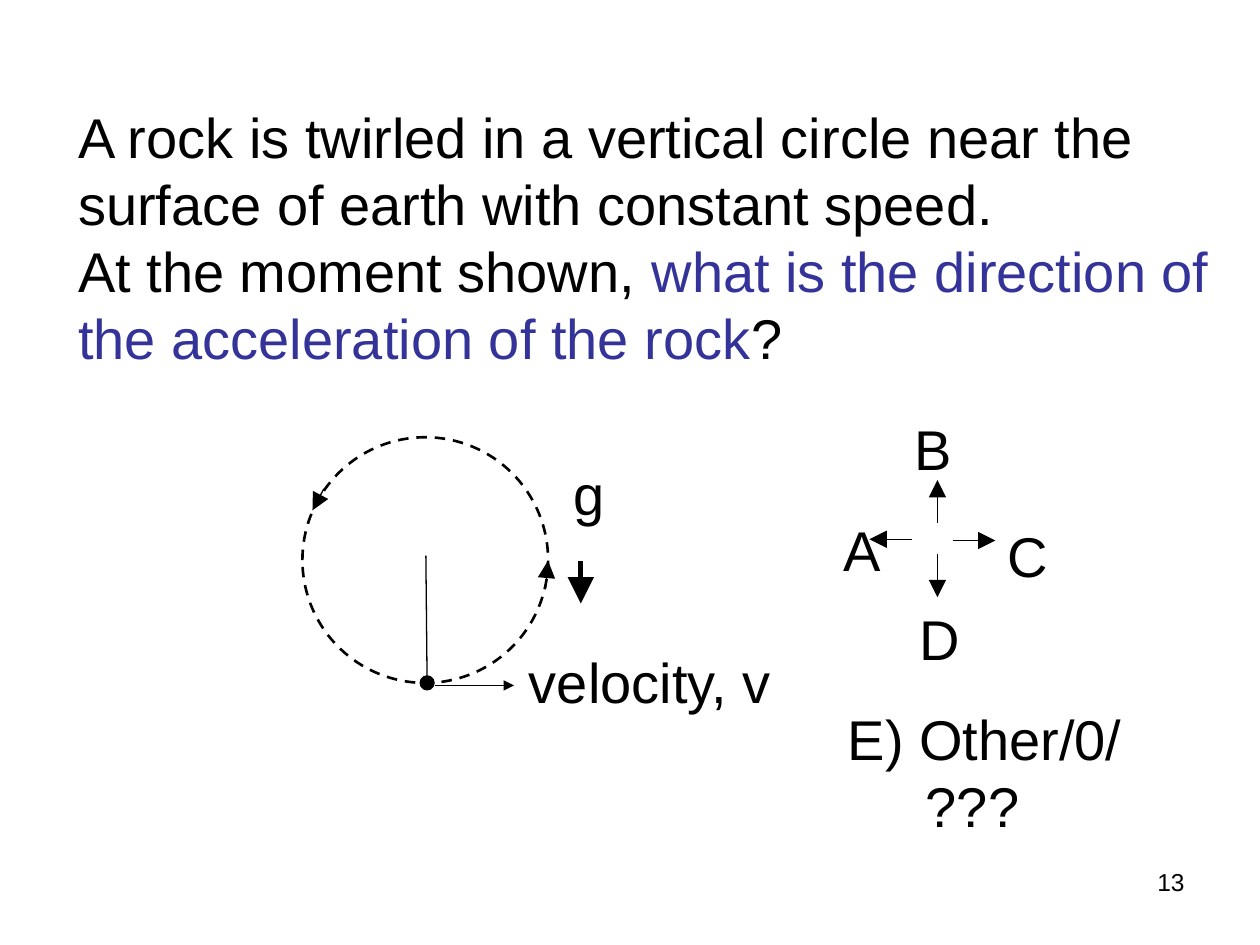
from lxml import etree
from pptx import Presentation
from pptx.dml.color import RGBColor
from pptx.enum.dml import MSO_LINE
from pptx.enum.shapes import MSO_CONNECTOR, MSO_SHAPE
from pptx.enum.text import MSO_ANCHOR, MSO_AUTO_SIZE, PP_ALIGN
from pptx.oxml.ns import qn
from pptx.util import Inches, Pt

COLORS = {"ink": "000000", "question": "333399"}
FONT = "Arial"


def rgb(name):
    return RGBColor.from_string(COLORS[name])


def add_run(p, text, size=32, color="ink"):
    r = p.add_run()
    r.text = text
    r.font.name = FONT
    r.font.size = Pt(size)
    r.font.color.rgb = rgb(color)


def add_text(s, text, x, y, w, h=0.64, size=32, align=PP_ALIGN.LEFT, wrap=False):
    tf = s.shapes.add_textbox(Inches(x), Inches(y), Inches(w), Inches(h)).text_frame
    tf.word_wrap = wrap
    p = tf.paragraphs[0]
    p.alignment = align
    add_run(p, text, size)
    return tf


def add_line(s, x1, y1, x2, y2, width=0.75, head=None):
    """Draw a line; head is the arrowhead size at its end, "med" or "lg"."""
    line = s.shapes.add_connector(MSO_CONNECTOR.STRAIGHT, Inches(x1), Inches(y1),
                                  Inches(x2), Inches(y2))
    line.line.color.rgb = rgb("ink")
    line.line.width = Pt(width)
    if head:
        etree.SubElement(line.line._get_or_add_ln(), qn("a:tailEnd"),
                         type="triangle", w=head, len=head)
    etree.SubElement(line._element.spPr, qn("a:effectLst"))


def add_circle(s, x, y, d, filled=False):
    sp = s.shapes.add_shape(MSO_SHAPE.OVAL, Inches(x), Inches(y), Inches(d), Inches(d))
    sp.shadow.inherit = False
    sp.line.color.rgb = rgb("ink")
    sp.line.width = Pt(1.5)
    if filled:
        sp.fill.solid()
        sp.fill.fore_color.rgb = rgb("ink")
    else:
        sp.fill.background()
        sp.line.dash_style = MSO_LINE.DASH


def question(s, x, y, w, h):
    title = s.shapes.title
    title.left, title.top, title.width, title.height = map(Inches, (x, y, w, h))
    tf = title.text_frame
    tf.word_wrap = True
    tf.auto_size = MSO_AUTO_SIZE.NONE
    tf.vertical_anchor = MSO_ANCHOR.TOP
    p = tf.paragraphs[0]
    p.alignment = PP_ALIGN.LEFT
    add_run(p, "A rock is twirled in a vertical circle near the "
               "surface of earth with constant speed.")
    p.add_line_break()
    add_run(p, "At the moment shown, ")
    add_run(p, "what is the direction of the acceleration of the rock", color="question")
    add_run(p, "?")


def rock_on_string(s, x, y, d):
    """Dashed path of diameter d with the rock at its lowest point."""
    add_circle(s, x, y, d)
    add_line(s, x + 0.98, y + 0.94, x + 0.99, y + d)
    add_circle(s, x + 0.94, y + 1.9, 0.1, filled=True)
    add_line(s, x + 1.05, y + 1.97, x + 1.68, y + 1.97, head="med")
    add_text(s, "velocity, v", x + 1.7, y + 1.62, 2.14)
    # Sense of rotation
    add_line(s, x + 1.93, y + 1.2, x + d, y + 0.98, head="lg")
    add_line(s, x + 0.17, y + 0.41, x + 0.08, y + 0.58, head="lg")
    # Gravity
    add_text(s, "g", x + 2.05, y + 0.13, 0.45)
    add_line(s, x + 2.21, y + 0.98, x + 2.21, y + 1.32, width=3, head="lg")


def answer_compass(s, cx, cy):
    """Four arrows around a centre, each with its answer letter."""
    inner, outer = 0.13, 0.47
    answers = [  # letter, direction, arrow centre shift, label place and width
        ("A", (-1, 0), (-0.07, 0), (-0.84, -0.24), 0.5),
        ("B", (0, -1), (0, 0), (-0.28, -1.04), 0.5),
        ("C", (1, 0), (-0.01, 0.01), (0.46, -0.19), 0.53),
        ("D", (0, 1), (0, -0.01), (-0.24, 0.47), 0.53),
    ]
    for letter, (dx, dy), (sx, sy), (lx, ly), w in answers:
        x, y = cx + sx, cy + sy
        add_line(s, x + dx * inner, y + dy * inner, x + dx * outer, y + dy * outer,
                 head="lg")
        add_text(s, letter, cx + lx, cy + ly, w)


def other_answer(s, x, y, w, h):
    tf = add_text(s, "E) Other/0/", x, y, w, h)
    p = tf.add_paragraph()
    p._p.get_or_add_pPr().set("marL", str(Inches(0.62)))
    add_run(p, "???")


def main():
    prs = Presentation()
    prs.slide_width, prs.slide_height = Inches(10), Inches(7.5)
    s = prs.slides.add_slide(prs.slide_layouts[5])
    question(s, 0.52, 0.76, 9.48, 2.26)
    rock_on_string(s, 2.4, 3.47, 1.95)
    answer_compass(s, 7.44, 4.28)
    other_answer(s, 6.63, 5.54, 2.4, 1.18)
    add_text(s, "13", 7.17, 6.83, 2.33, 0.52, size=14, align=PP_ALIGN.RIGHT, wrap=True)
    prs.save("out.pptx")


if __name__ == "__main__":
    main()
